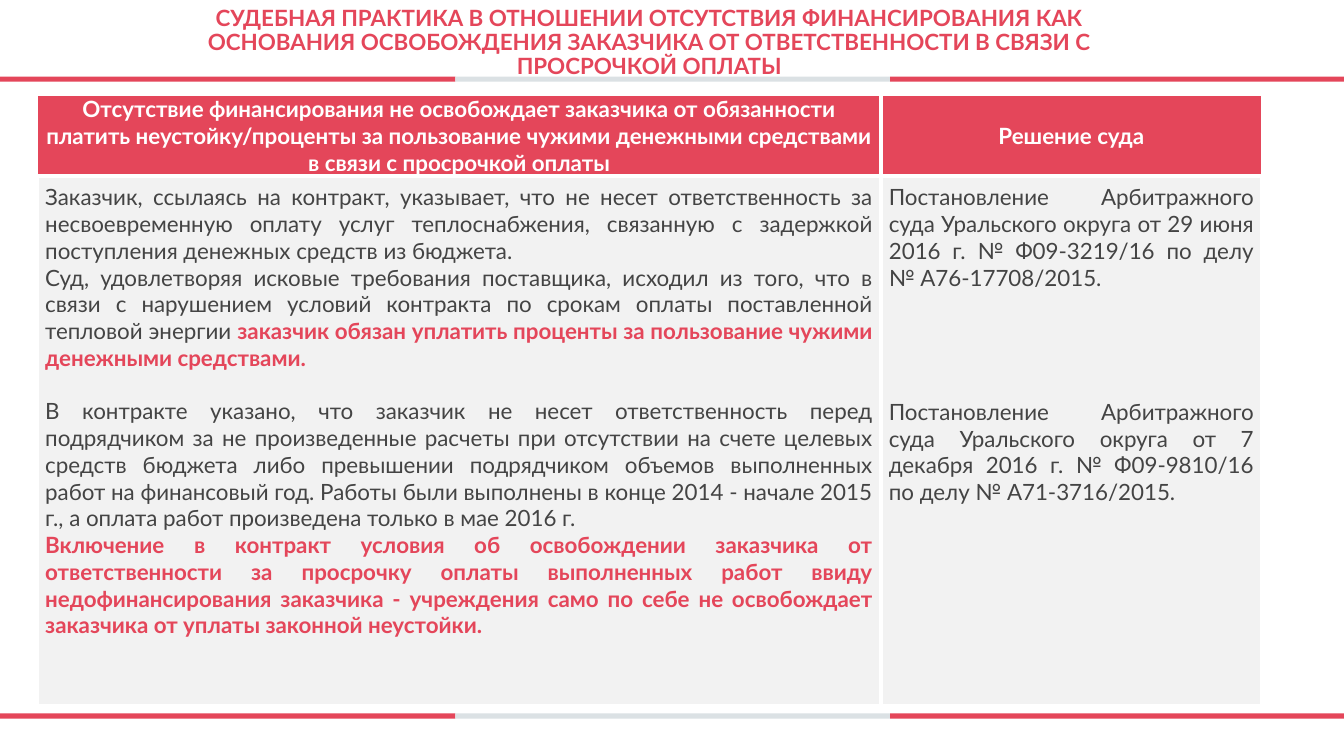
from pptx import Presentation
from pptx.dml.color import RGBColor
from pptx.enum.shapes import MSO_SHAPE
from pptx.enum.text import MSO_ANCHOR, PP_ALIGN
from pptx.oxml.ns import qn
from pptx.util import Cm, Pt
from lxml.etree import SubElement

RED = RGBColor(0xE4, 0x46, 0x5A)
GREY = RGBColor(0xDB, 0xE1, 0xE4)
PALE = RGBColor(0xF2, 0xF2, 0xF2)
DARK = RGBColor(0x44, 0x44, 0x44)
WHITE = RGBColor(0xFF, 0xFF, 0xFF)

FONT = "Lato"
SIZE = 16
LINE = 19.2

TITLE = (
    "СУДЕБНАЯ ПРАКТИКА В ОТНОШЕНИИ ОТСУТСТВИЯ ФИНАНСИРОВАНИЯ КАК ОСНОВАНИЯ "
    "ОСВОБОЖДЕНИЯ ЗАКАЗЧИКА ОТ ОТВЕТСТВЕННОСТИ В СВЯЗИ С ПРОСРОЧКОЙ ОПЛАТЫ"
)
HEADERS = [
    "Отсутствие финансирования не освобождает заказчика от обязанности платить "
    "неустойку/проценты за пользование чужими денежными средствами в связи с "
    "просрочкой оплаты",
    "Решение суда",
]
CASES = [
    (0, [("Заказчик, ссылаясь на контракт, указывает, что не несет ответственность за "
          "несвоевременную оплату услуг теплоснабжения, связанную с задержкой "
          "поступления денежных средств из бюджета.", False)]),
    (0, [("Суд, удовлетворяя исковые требования поставщика, исходил из того, что в "
          "связи с нарушением условий контракта по срокам оплаты поставленной "
          "тепловой энергии ", False),
         ("заказчик обязан уплатить проценты за пользование чужими денежными "
          "средствами.", True)]),
    (1, [("В контракте указано, что заказчик не несет ответственность перед "
          "подрядчиком за не произведенные расчеты при отсутствии на счете целевых "
          "средств бюджета либо превышении подрядчиком объемов выполненных работ на "
          "финансовый год. Работы были выполнены в конце 2014 - начале 2015 г., а "
          "оплата работ произведена только в мае 2016 г.", False)]),
    (0, [("Включение в контракт условия об освобождении заказчика от ответственности "
          "за просрочку оплаты выполненных работ ввиду недофинансирования заказчика - "
          "учреждения само по себе не освобождает заказчика от уплаты законной "
          "неустойки.", True)]),
]
RULINGS = [
    (0, [("Постановление Арбитражного суда Уральского округа от 29 июня 2016 г. "
          "№ Ф09-3219/16 по делу № А76-17708/2015.", False)]),
    (4, [("Постановление Арбитражного суда Уральского округа от 7 декабря 2016 г. "
          "№ Ф09-9810/16 по делу № А71-3716/2015.", False)]),
]


def add_stripe(s, top):
    for left, width, color in [(0, 11.48, RED), (11.48, 10.95, GREY), (22.43, 11.44, RED)]:
        sp = s.shapes.add_shape(MSO_SHAPE.RECTANGLE, Cm(left), Cm(top), Cm(width), Cm(0.13))
        sp.shadow.inherit = False
        sp.fill.solid()
        sp.fill.fore_color.rgb = color
        sp.line.fill.background()


def write_heading(p, text, color):
    p.text = text
    p.alignment = PP_ALIGN.CENTER
    p.font.name = FONT
    p.font.size = Pt(SIZE)
    p.font.bold = True
    p.font.color.rgb = color


def add_title(s):
    tf = s.shapes.add_textbox(Cm(4.11), Cm(0.13), Cm(24.51), Cm(1.93)).text_frame
    tf.word_wrap = True
    tf.vertical_anchor = MSO_ANCHOR.MIDDLE
    p = tf.paragraphs[0]
    write_heading(p, TITLE, RED)
    p.line_spacing = 0.9


def style_cell(cell, fill, margin, widths):
    cell.margin_left = cell.margin_right = Cm(0.2)
    cell.margin_top = cell.margin_bottom = Cm(margin)
    tcPr = cell._tc.get_or_add_tcPr()
    for side, width in zip("LRTB", widths):
        ln = SubElement(tcPr, qn(f"a:ln{side}"), w=str(Pt(width)))
        SubElement(SubElement(ln, qn("a:solidFill")), qn("a:srgbClr"), val=str(WHITE))
    cell.fill.solid()
    cell.fill.fore_color.rgb = fill


def fill_body(cell, paragraphs):
    tf = cell.text_frame
    for i, (gap, runs) in enumerate(paragraphs):
        p = tf.add_paragraph() if i else tf.paragraphs[0]
        p.alignment = PP_ALIGN.JUSTIFY
        p.font.name = FONT
        p.font.size = Pt(SIZE)
        if gap:
            p.space_before = Pt(gap * LINE)
        for text, strong in runs:
            r = p.add_run()
            r.text = text
            r.font.bold = strong
            r.font.color.rgb = RED if strong else DARK


def add_cases_table(s):
    table = s.shapes.add_table(2, 2, Cm(0.94), Cm(2.41), Cm(30.86), Cm(15.24)).table
    for column, width in zip(table.columns, (21.26, 9.6)):
        column.width = Cm(width)
    for row, height in zip(table.rows, (1.88, 13.36)):
        row.height = Cm(height)
    for col, (header, body) in enumerate(zip(HEADERS, (CASES, RULINGS))):
        cell = table.cell(0, col)
        style_cell(cell, RED, 0, (3, 1, 1, 3) if col else (1, 3, 1, 3))
        cell.vertical_anchor = MSO_ANCHOR.MIDDLE
        write_heading(cell.text_frame.paragraphs[0], header, WHITE)
        cell = table.cell(1, col)
        style_cell(cell, PALE, 0.2, (3, 3, 3, 3))
        fill_body(cell, body)


def main():
    prs = Presentation()
    prs.slide_width = Cm(33.87)
    prs.slide_height = Cm(19.05)
    s = prs.slides.add_slide(prs.slide_layouts[6])
    for top in (1.93, 17.98):
        add_stripe(s, top)
    add_cases_table(s)
    add_title(s)
    prs.save("out.pptx")


if __name__ == "__main__":
    main()
